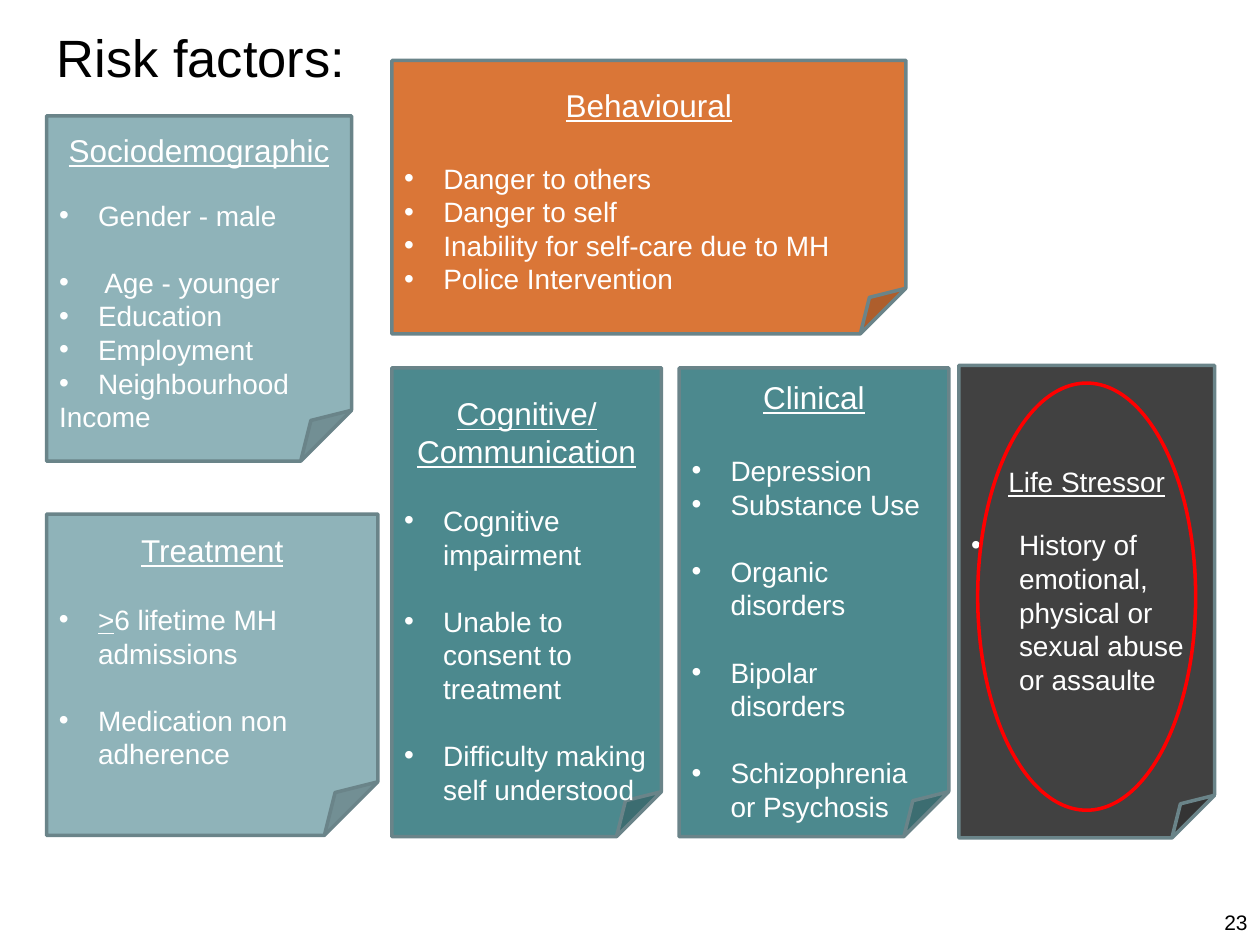
from dataclasses import dataclass

from lxml.etree import SubElement
from pptx import Presentation
from pptx.dml.color import RGBColor
from pptx.enum.shapes import MSO_SHAPE
from pptx.enum.text import MSO_ANCHOR, PP_ALIGN
from pptx.oxml.ns import qn
from pptx.util import Inches, Pt


@dataclass(frozen=True)
class Theme:
    font: str = "Arial"
    ink: str = "000000"
    light: str = "FFFFFF"
    edge: str = "6A8489"
    mist: str = "8FB3B9"
    amber: str = "DA7637"
    teal: str = "4C898E"
    coal: str = "414141"
    alert: str = "FF0000"
    title: int = 30
    head: int = 18
    item: int = 16
    note: int = 12
    line: int = 2
    lead: float = 1.2


@dataclass(frozen=True)
class Item:
    text: str
    gap: float = 0
    mark: str = ""
    bullet: bool = True


@dataclass(frozen=True)
class Card:
    box: tuple
    fill: str
    head: str
    items: list
    top: float
    gap: float
    size: int = 18
    hang: float = 3.1


class Deck:
    """Draws on a grid of 100 columns by 75 rows."""

    def __init__(self, theme):
        self.theme = theme
        self.file = Presentation()
        self.file.slide_width, self.file.slide_height = Inches(10), Inches(7.5)
        self.unit = self.file.slide_width / 100
        self.slide = self.file.slides.add_slide(self.file.slide_layouts[5])

    def span(self, *cells):
        return [int(cell * self.unit) for cell in cells]

    def style(self, para, size, color, align=PP_ALIGN.LEFT):
        para.alignment = align
        para.font.name = self.theme.font
        para.font.size = Pt(size)
        para.font.color.rgb = RGBColor.from_string(color)

    def title(self, box, text):
        shape = self.slide.shapes.title
        shape.left, shape.top, shape.width, shape.height = self.span(*box)
        shape.text_frame.text = text
        shape.text_frame.vertical_anchor = MSO_ANCHOR.MIDDLE
        self.style(shape.text_frame.paragraphs[0], self.theme.title, self.theme.ink)

    def number(self, box, text):
        frame = self.slide.shapes.add_textbox(*self.span(*box)).text_frame
        frame.word_wrap = True
        frame.text = text
        self.style(frame.paragraphs[0], self.theme.note, self.theme.ink, PP_ALIGN.RIGHT)

    def shape(self, kind, box, edge, fill=None):
        shape = self.slide.shapes.add_shape(kind, *self.span(*box))
        shape.shadow.inherit = False
        shape.line.color.rgb = RGBColor.from_string(edge)
        shape.line.width = Pt(self.theme.line)
        if fill:
            shape.fill.solid()
            shape.fill.fore_color.rgb = RGBColor.from_string(fill)
        else:
            shape.fill.background()
        return shape

    def bullet(self, para, hang):
        props = para._p.get_or_add_pPr()
        indent, = self.span(hang)
        props.set("marL", str(indent))
        props.set("indent", str(-indent))
        SubElement(props, qn("a:buFont"), typeface=self.theme.font)
        SubElement(props, qn("a:buChar"), char="•")

    def card(self, card):
        theme = self.theme
        shape = self.shape(MSO_SHAPE.FOLDED_CORNER, card.box, theme.edge, card.fill)
        frame = shape.text_frame
        frame.word_wrap = True
        frame.vertical_anchor = MSO_ANCHOR.TOP
        frame.margin_top, = self.span(card.top)

        head = frame.paragraphs[0]
        head.text = card.head
        head.line_spacing = Pt(card.size * theme.lead)
        self.style(head, card.size, theme.light, PP_ALIGN.CENTER)
        head.font.underline = True

        for index, item in enumerate(card.items):
            para = frame.add_paragraph()
            if item.bullet:
                self.bullet(para, card.hang)
            if item.mark:
                run = para.add_run()
                run.text = item.mark
                run.font.underline = True
            para.add_run().text = item.text
            para.line_spacing = Pt(theme.item * theme.lead)
            para.space_before = Pt(item.gap if index else card.gap)
            self.style(para, theme.item, theme.light)

    def ring(self, box):
        self.shape(MSO_SHAPE.OVAL, box, self.theme.alert)


def main():
    theme = Theme()
    deck = Deck(theme)
    small, blank, large = (size * theme.lead for size in (14, theme.item, theme.head))

    cards = [
        Card((3.7, 9.2, 24.2, 27.4), theme.mist, "Sociodemographic",
             [Item("Gender - male"), Item(" Age - younger", blank),
              Item("Education"), Item("Employment"), Item("Neighbourhood"),
              Item("Income", bullet=False)], 1.2, small),
        Card((31.1, 4.8, 40.8, 21.7), theme.amber, "Behavioural",
             [Item("Danger to others"), Item("Danger to self"),
              Item("Inability for self-care due to MH"),
              Item("Police Intervention")], 2, large),
        Card((53.9, 29.2, 21.4, 37.2), theme.teal, "Clinical",
             [Item("Depression"), Item("Substance Use"),
              Item("Organic disorders", blank), Item("Bipolar disorders", blank),
              Item("Schizophrenia or Psychosis", blank)], 0.8, large),
        Card((3.7, 40.8, 26.3, 25.5), theme.mist, "Treatment",
             [Item("6 lifetime MH admissions", mark=">"),
              Item("Medication non adherence", blank)], 1.35, blank),
        Card((31.1, 29.2, 21.4, 37.2), theme.teal, "Cognitive/ Communication",
             [Item("Cognitive impairment"),
              Item("Unable to consent to treatment", blank),
              Item("Difficulty making self understood", blank)], 2.1, blank),
        Card((76.1, 29, 20.3, 37.5), theme.coal, "Life Stressor",
             [Item("History of emotional, physical or sexual abuse or assaulte")],
             7.9, small, theme.item, 3.8),
    ]

    deck.title((3.5, 0.3, 83.5, 8.3), "Risk factors:")
    deck.number((89.2, 71.7, 10.8, 3.3), "23")
    for card in cards:
        deck.card(card)
    deck.ring((77.6, 30.4, 17.3, 33.9))
    deck.file.save("out.pptx")


if __name__ == "__main__":
    main()
